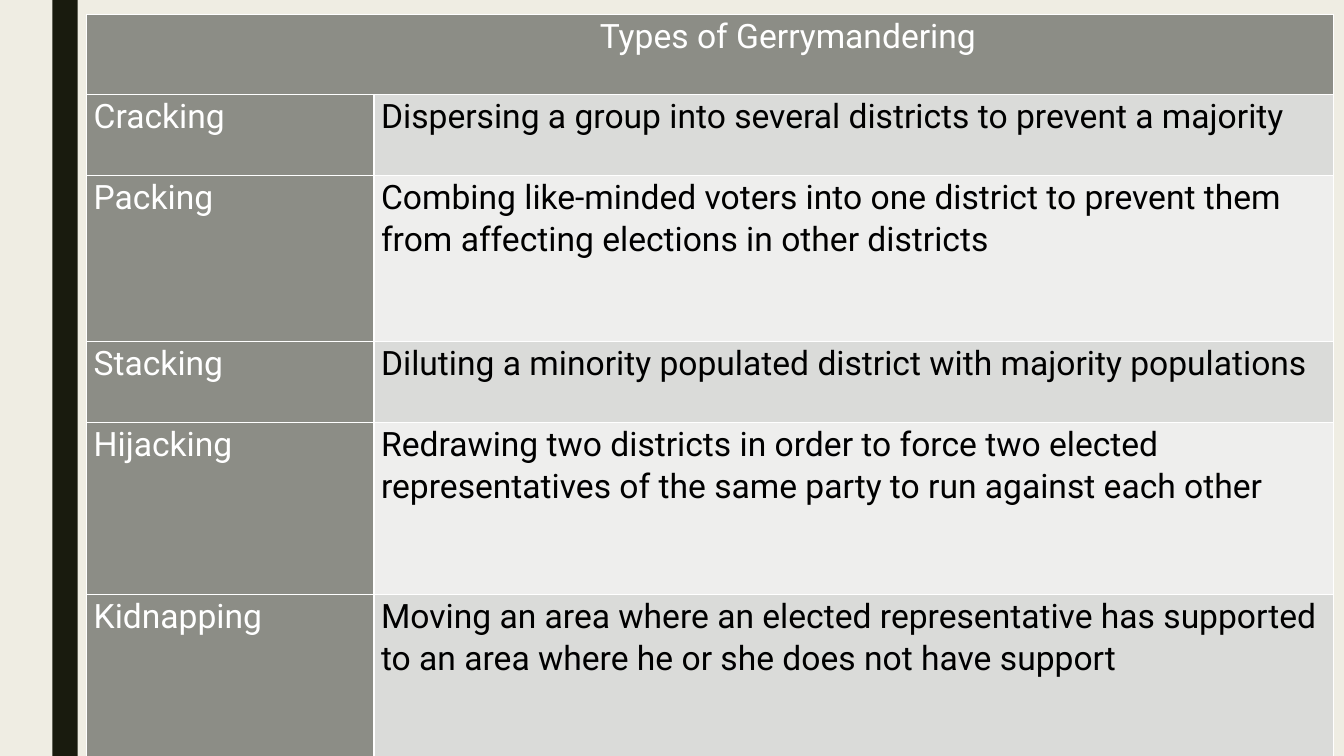
"""Builds a slide with a table that defines the types of gerrymandering."""
from dataclasses import dataclass

from lxml import etree
from pptx import Presentation
from pptx import util as u
from pptx.dml.color import RGBColor
from pptx.enum import shapes
from pptx.oxml.ns import qn


@dataclass(frozen=True)
class Theme:
    background: str = "EFEDE3"
    stripe: str = "191B0E"
    label: str = "8C8D86"
    bands: tuple = ("DADBD9", "EEEEED")
    light: str = "FFFFFF"
    dark: str = "000000"
    font: str = "Roboto"
    size: int = 24
    border: int = 1


theme = Theme()


def add_borders(cell):
    properties = cell._tc.get_or_add_tcPr()
    for position, side in enumerate(("lnL", "lnR", "lnT", "lnB")):
        line = etree.Element(qn(f"a:{side}"), w=str(u.Pt(theme.border)))
        fill = etree.SubElement(line, qn("a:solidFill"))
        etree.SubElement(fill, qn("a:srgbClr"), val=theme.light)
        properties.insert(position, line)


def fill_cell(cell, wording, fill, color, indent=0.07):
    cell.margin_left, cell.margin_right = u.Inches(indent), u.Inches(0.07)
    cell.margin_top = cell.margin_bottom = 0
    cell.fill.solid()
    cell.fill.fore_color.rgb = RGBColor.from_string(fill)
    paragraph = cell.text_frame.paragraphs[0]
    paragraph.line_spacing = 1.07
    run = paragraph.add_run()
    run.text = wording
    run.font.name = theme.font
    run.font.size = u.Pt(theme.size)
    run.font.bold = False
    run.font.color.rgb = RGBColor.from_string(color)


presentation = Presentation()
presentation.slide_width = u.Inches(13.33)
presentation.slide_height = u.Inches(7.5)
slide = presentation.slides.add_slide(presentation.slide_layouts[6])
slide.background.fill.solid()
slide.background.fill.fore_color.rgb = RGBColor.from_string(theme.background)

stripe = slide.shapes.add_shape(
    shapes.MSO_SHAPE.RECTANGLE, u.Inches(0.52), 0, u.Inches(0.25), presentation.slide_height)
stripe.shadow.inherit = False
stripe.fill.solid()
stripe.fill.fore_color.rgb = RGBColor.from_string(theme.stripe)
stripe.line.fill.background()

definitions = {
    "Cracking": "Dispersing a group into several districts to prevent a majority",
    "Packing": "Combing like-minded voters into one district to prevent them "
               "from affecting elections in other districts",
    "Stacking": "Diluting a minority populated district with majority populations",
    "Hijacking": "Redrawing two districts in order to force two elected "
                 "representatives of the same party to run against each other",
    "Kidnapping": "Moving an area where an elected representative has supported "
                  "to an area where he or she does not have support",
}
column_widths = (2.85, 9.52)
row_heights = (0.8, 0.8, 1.65, 0.8, 1.71, 1.65)

table = slide.shapes.add_table(
    len(row_heights), len(column_widths), u.Inches(0.86), u.Inches(0.14),
    u.Inches(sum(column_widths)), u.Inches(sum(row_heights))).table
table.first_row = False
table.horz_banding = False
for column, width in zip(table.columns, column_widths):
    column.width = u.Inches(width)
for row, height in zip(table.rows, row_heights):
    row.height = u.Inches(height)

heading = table.cell(0, 0)
heading.merge(table.cell(0, 1))
fill_cell(heading, "Types of Gerrymandering", theme.label, theme.light, indent=5.09)

for index, (name, definition) in enumerate(definitions.items()):
    fill_cell(table.cell(index + 1, 0), name, theme.label, theme.light)
    fill_cell(table.cell(index + 1, 1), definition, theme.bands[index % 2], theme.dark)

for cell in table.iter_cells():
    add_borders(cell)

presentation.save("out.pptx")
